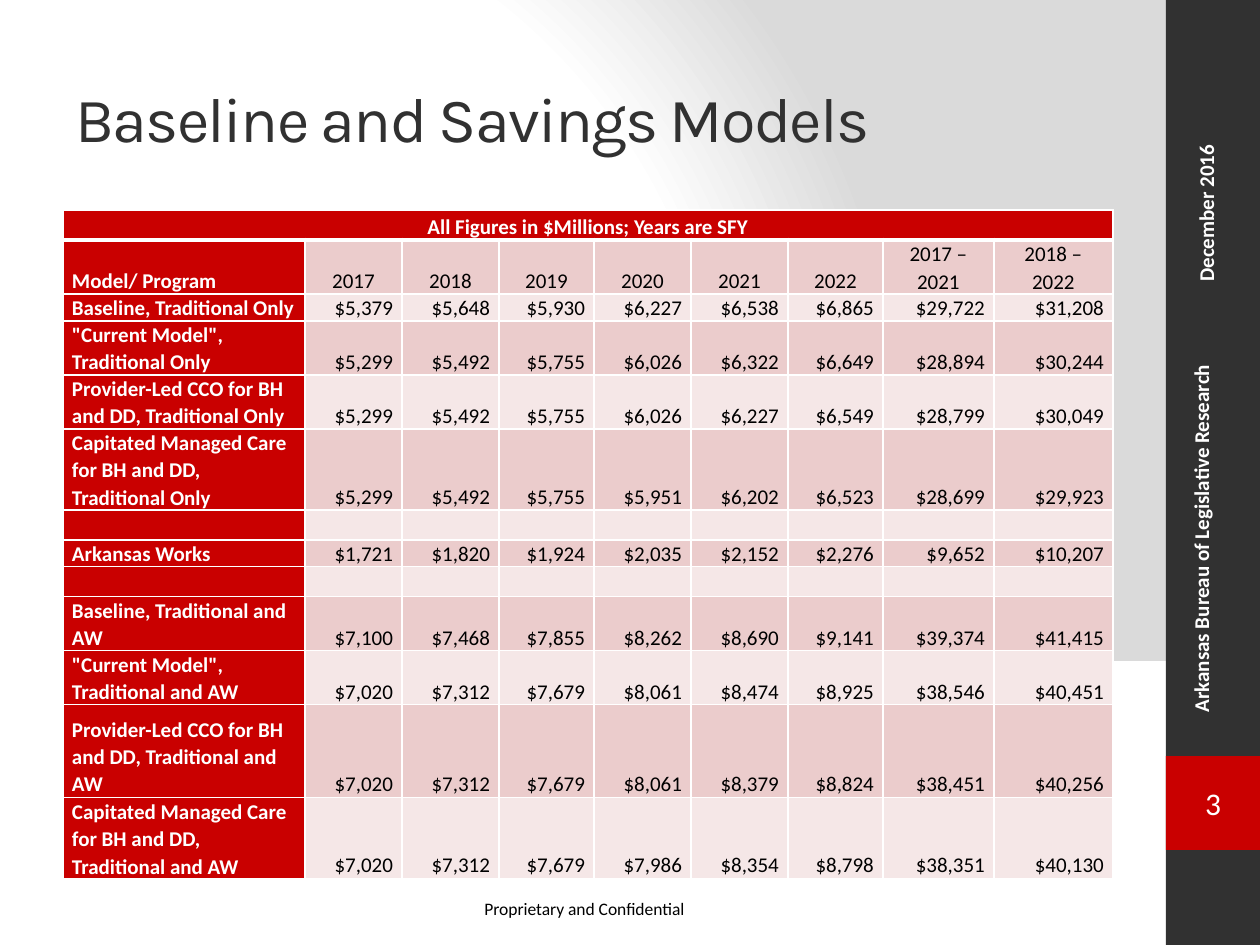
from dataclasses import dataclass

from lxml import etree
from pptx import Presentation
from pptx.dml.color import RGBColor as RGB
from pptx.enum.shapes import MSO_SHAPE as SHAPE
from pptx.enum.text import MSO_ANCHOR as ANCHOR, MSO_AUTO_SIZE as AUTO, PP_ALIGN as ALIGN
from pptx.oxml.ns import qn
from pptx.util import Emu, Pt


@dataclass(frozen=True)
class Theme:
    white: str = "FFFFFF"
    black: str = "000000"
    dark: str = "313131"
    red: str = "C90000"
    grey: str = "DADADA"
    bands: tuple = ("F5E7E7", "EBCCCC")
    body: str = "Calibri"
    heading: str = "Karla"
    title: int = 36
    number: int = 18
    text: int = 12
    footer: int = 10


T = Theme()
EMU_PER_PX = 914400 / 126
CELL_MARGIN = 9
LINE_SPACING = 1.07

COL_WIDTHS = [242, 97, 97, 95, 97, 97, 95, 111, 119]
ROW_HEIGHTS = [30, 54, 27, 54, 54, 81, 30, 27, 30, 54, 54, 93, 81]
CAPTION = "All Figures in $Millions; Years are SFY"
HEADER = ["Model/ Program", "2017", "2018", "2019", "2020", "2021", "2022",
          "2017 –2021", "2018 – 2022"]
MODELS = [
    ("Baseline, Traditional Only", [5379, 5648, 5930, 6227, 6538, 6865, 29722, 31208]),
    ('"Current Model", Traditional Only', [5299, 5492, 5755, 6026, 6322, 6649, 28894, 30244]),
    ("Provider-Led CCO for BH and DD, Traditional Only",
     [5299, 5492, 5755, 6026, 6227, 6549, 28799, 30049]),
    ("Capitated Managed Care for BH and DD, Traditional Only",
     [5299, 5492, 5755, 5951, 6202, 6523, 28699, 29923]),
    None,
    ("Arkansas Works", [1721, 1820, 1924, 2035, 2152, 2276, 9652, 10207]),
    None,
    ("Baseline, Traditional and AW", [7100, 7468, 7855, 8262, 8690, 9141, 39374, 41415]),
    ('"Current Model", Traditional and AW', [7020, 7312, 7679, 8061, 8474, 8925, 38546, 40451]),
    ("Provider-Led CCO for BH and DD, Traditional and AW",
     [7020, 7312, 7679, 8061, 8379, 8824, 38451, 40256]),
    ("Capitated Managed Care for BH and DD, Traditional and AW",
     [7020, 7312, 7679, 7986, 8354, 8798, 38351, 40130]),
]


def px(n):
    return Emu(round(n * EMU_PER_PX))


def apply(obj, values):
    for name, value in values.items():
        setattr(obj, name, value)


def write(tf, text, size, color, font=T.body, bold=False, align=ALIGN.LEFT):
    p = tf.paragraphs[0]
    p.alignment = align
    r = p.add_run()
    r.text = text
    apply(r.font, {"size": Pt(size), "name": font, "bold": bold})
    r.font.color.rgb = RGB.from_string(color)
    return p


def add_gradient(slide):
    slide.background.fill.gradient()
    grad = next(slide.element.iter(qn("a:gradFill")))
    for child in list(grad):
        grad.remove(child)
    stops = etree.SubElement(grad, qn("a:gsLst"))
    for pos, color in ((0, T.white), (75, T.white), (100, T.grey)):
        gs = etree.SubElement(stops, qn("a:gs"), pos=str(pos * 1000))
        etree.SubElement(gs, qn("a:srgbClr"), val=color)
    circle = etree.SubElement(grad, qn("a:path"), path="circle")
    etree.SubElement(circle, qn("a:fillToRect"), l="20000", t="50000", r="100000", b="50000")


def add_block(slide, box, color):
    s = slide.shapes.add_shape(SHAPE.RECTANGLE, *map(px, box))
    s.shadow.inherit = False
    s.fill.solid()
    s.fill.fore_color.rgb = RGB.from_string(color)
    s.line.fill.background()
    return s


def add_text(slide, box, text, size, color, wrap=True, **style):
    sp = slide.shapes.add_textbox(*map(px, box))
    sp.text_frame.word_wrap = wrap
    write(sp.text_frame, text, size, color, **style)
    return sp


def add_side_text(slide, box, text):
    sp = add_text(slide, box, text, T.text, T.white, bold=True)
    sp.text_frame.auto_size = AUTO.SHAPE_TO_FIT_TEXT
    sp.text_frame._txBody.bodyPr.set("vert", "vert270")


def set_borders(cell, row):
    tc_pr = cell._tc.get_or_add_tcPr()
    for side in "LRTB":
        thick = (side, row) in (("B", 0), ("T", 1))
        ln = etree.SubElement(tc_pr, qn(f"a:ln{side}"), w=str(Pt(3 if thick else 1)))
        fill = etree.SubElement(ln, qn("a:solidFill"))
        etree.SubElement(fill, qn("a:srgbClr"), val=T.white)


def fill_cell(cell, row, text, color, fill, bold, align):
    set_borders(cell, row)
    cell.fill.solid()
    cell.fill.fore_color.rgb = RGB.from_string(fill)
    apply(cell, {"margin_left": px(CELL_MARGIN), "margin_right": px(CELL_MARGIN),
                 "margin_top": 0, "margin_bottom": 0, "vertical_anchor": ANCHOR.BOTTOM})
    if text:
        p = write(cell.text_frame, text, T.text, color, bold=bold, align=align)
        p.line_spacing = LINE_SPACING
    else:
        p = cell.text_frame.paragraphs[0]
        etree.SubElement(p._p, qn("a:endParaRPr"), sz=str(T.text * 100))


def table_rows():
    blank = [""] * len(COL_WIDTHS)
    body = [[m[0], *(f"${v:,}" for v in m[1])] if m else blank for m in MODELS]
    return [[CAPTION, *blank[1:]], HEADER, *body]


def add_savings_table(slide, left, top):
    rows = table_rows()
    size = (sum(COL_WIDTHS), sum(ROW_HEIGHTS))
    table = slide.shapes.add_table(len(rows), len(COL_WIDTHS),
                                   *map(px, (left, top, *size))).table
    for col, width in zip(table.columns, COL_WIDTHS):
        col.width = px(width)
    for row, height in zip(table.rows, ROW_HEIGHTS):
        row.height = px(height)
    table.cell(0, 0).merge(table.cell(0, len(COL_WIDTHS) - 1))
    for i, row in enumerate(rows):
        for j, text in enumerate(row):
            label = i == 0 or j == 0
            if i == 0 or (i == 1 and j > 0):
                align = ALIGN.CENTER
            else:
                align = ALIGN.LEFT if label else ALIGN.RIGHT
            fill_cell(table.cell(i, j), i, text, T.white if label else T.black,
                      T.red if label else T.bands[i % 2], label, align)


def main():
    prs = Presentation()
    prs.slide_width, prs.slide_height = px(1260), px(945)
    slide = prs.slides.add_slide(prs.slide_layouts[6])
    add_gradient(slide)

    add_block(slide, (0, 661, 1176, 284), T.white)
    add_block(slide, (1166, 0, 94, 945), T.dark)
    number = add_block(slide, (1166, 756, 94, 94), T.red)
    number.text_frame.vertical_anchor = ANCHOR.MIDDLE
    write(number.text_frame, "3", T.number, T.white, align=ALIGN.CENTER)

    add_text(slide, (472, 892, 228, 34), "Proprietary and Confidential",
             T.footer, T.black, wrap=False)
    add_side_text(slide, (1182, 284, 50, 441), "Arkansas Bureau of Legislative Research")
    add_side_text(slide, (1187, 63, 50, 231), "December 2016")

    title = add_text(slide, (63, 38, 1050, 158), "Baseline and Savings Models",
                     T.title, T.dark, font=T.heading)
    title.text_frame.vertical_anchor = ANCHOR.MIDDLE
    title.text_frame.paragraphs[0].runs[0].font._element.set("spc", "-100")

    add_savings_table(slide, 63, 210)
    prs.save("out.pptx")


if __name__ == "__main__":
    main()
